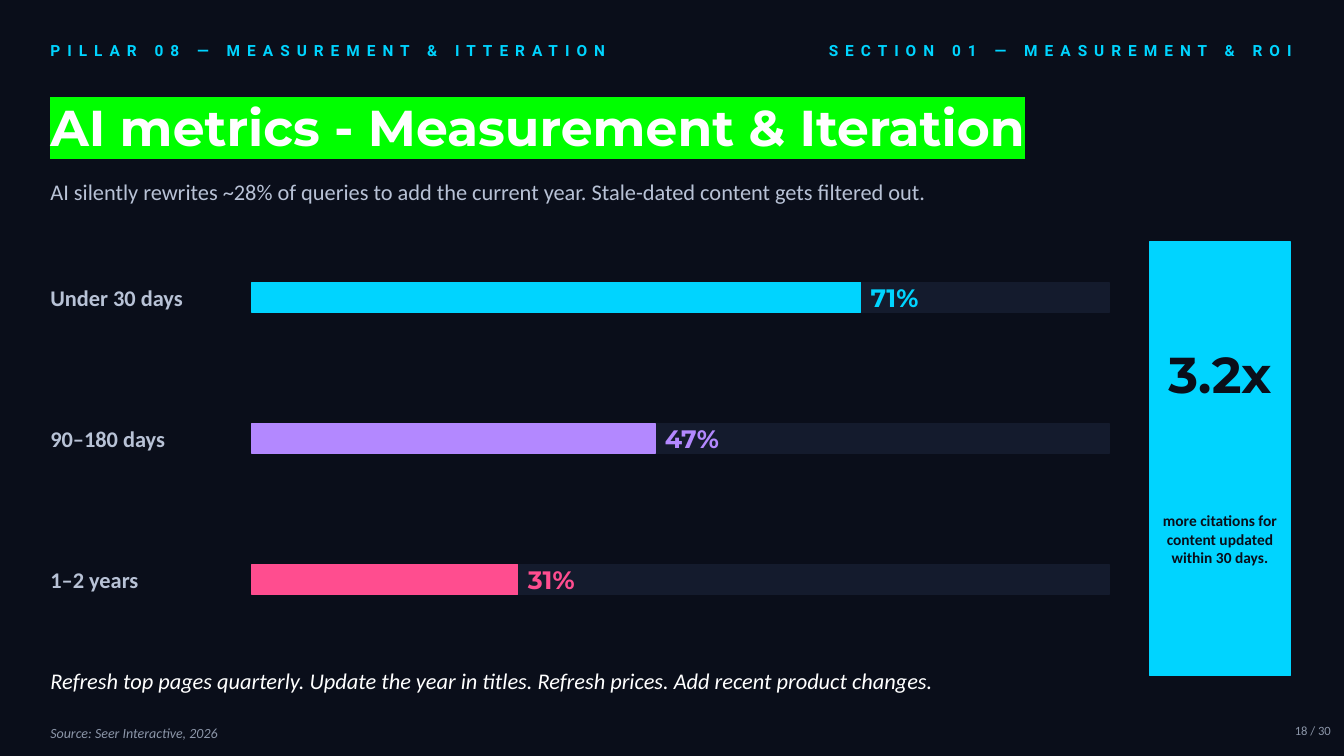
from dataclasses import dataclass, field

from lxml.etree import SubElement
from pptx import Presentation
from pptx.dml.color import RGBColor
from pptx.enum.shapes import MSO_SHAPE
from pptx.enum.text import MSO_ANCHOR, PP_ALIGN
from pptx.oxml.ns import qn
from pptx.slide import Slide
from pptx.util import Inches, Pt

COLORS = {
    "navy": "0A0E1A",
    "track": "141B2D",
    "cyan": "00D4FF",
    "violet": "B388FF",
    "pink": "FF4D8F",
    "green": "00FF00",
    "white": "FFFFFF",
    "mist": "B8C2D6",
    "gray": "8B95A8",
}
FORMATS = {
    "title": {"name": "Montserrat", "size": Pt(36), "bold": True},
    "value": {"name": "Montserrat", "size": Pt(18), "bold": True},
    "body": {"name": "Calibri", "size": Pt(16)},
    "label": {"name": "Calibri", "size": Pt(16), "bold": True},
    "action": {"name": "Calibri", "size": Pt(16), "italic": True},
    "caption": {"name": "Calibri", "size": Pt(11), "bold": True},
    "source": {"name": "Calibri", "size": Pt(10), "italic": True},
    "page": {"name": "Calibri", "size": Pt(9)},
    "header": {"name": "Roboto", "size": Pt(11), "bold": True},
}
FRAME = {
    "margin_left": 0,
    "margin_right": 0,
    "margin_top": 0,
    "margin_bottom": 0,
    "word_wrap": True,
    "vertical_anchor": MSO_ANCHOR.MIDDLE,
}
Box = tuple[float, float, float, float]

MARGIN = 0.5
BAR_LEFT, BAR_WIDTH, BAR_HEIGHT = 2.5, 8.5, 0.3
ROW_TOP, ROW_STEP, ROW_HEIGHT = 2.6, 1.4, 0.7
CARD_LEFT, CARD_WIDTH = 11.4, 1.4


@dataclass
class Label:
    text: str
    box: Box
    style: str
    color: str
    align: PP_ALIGN = PP_ALIGN.LEFT
    highlight: str = ""
    attrs: dict[str, str] = field(default_factory=dict)


@dataclass
class Bar:
    age: str
    percent: int
    color: str


SPACED = {"spc": "500"}
LABELS = [
    Label("PILLAR 08 — MEASUREMENT & ITTERATION", (MARGIN, 0.35, 6, 0.3),
          "header", "cyan", attrs=SPACED),
    Label("SECTION 01 — MEASUREMENT & ROI", (8.22, 0.35, 5.1, 0.3),
          "header", "cyan", attrs=SPACED),
    Label("AI metrics - Measurement & Iteration", (MARGIN, 0.8, 12, 0.9),
          "title", "white", highlight="green"),
    Label("AI silently rewrites ~28% of queries to add the current year. "
          "Stale-dated content gets filtered out.",
          (MARGIN, 1.7, 12, 0.4), "body", "mist"),
    Label("3.2x", (CARD_LEFT, 3.2, CARD_WIDTH, 1), "title", "navy", PP_ALIGN.CENTER),
    Label("more citations for content updated within 30 days.",
          (CARD_LEFT, 4.2, CARD_WIDTH, 2.3), "caption", "navy", PP_ALIGN.CENTER),
    Label("Refresh top pages quarterly. Update the year in titles. "
          "Refresh prices. Add recent product changes.",
          (MARGIN, 6.6, 12, 0.3), "action", "white"),
    Label("Source: Seer Interactive, 2026", (MARGIN, 7.15, 12, 0.25), "source", "gray"),
    Label("18 / 30", (12.4, 7.1, 0.8, 0.3), "page", "gray", PP_ALIGN.RIGHT),
]
BARS = [
    Bar("Under 30 days", 71, "cyan"),
    Bar("90–180 days", 47, "violet"),
    Bar("1–2 years", 31, "pink"),
]


def rgb(color: str) -> RGBColor:
    return RGBColor.from_string(COLORS[color])


def add_label(s: Slide, label: Label) -> None:
    tf = s.shapes.add_textbox(*map(Inches, label.box)).text_frame
    for name, value in FRAME.items():
        setattr(tf, name, value)
    p = tf.paragraphs[0]
    p.alignment = label.align
    r = p.add_run()
    r.text = label.text
    r.font.color.rgb = rgb(label.color)
    rpr = r._r.get_or_add_rPr()
    if label.highlight:
        mark = SubElement(rpr, qn("a:highlight"))
        SubElement(mark, qn("a:srgbClr")).set("val", COLORS[label.highlight])
    for name, value in FORMATS[label.style].items():
        setattr(r.font, name, value)
    for name, value in label.attrs.items():
        rpr.set(name, value)


def add_rect(s: Slide, box: Box, color: str) -> None:
    sp = s.shapes.add_shape(MSO_SHAPE.RECTANGLE, *map(Inches, box))
    sp.shadow.inherit = False
    sp.fill.solid()
    sp.fill.fore_color.rgb = rgb(color)
    sp.line.color.rgb = rgb(color)
    sp.line.width = Pt(1)


def add_bar(s: Slide, bar: Bar, top: float) -> None:
    width = BAR_WIDTH * bar.percent / 100
    bar_top = top + (ROW_HEIGHT - BAR_HEIGHT) / 2
    add_label(s, Label(bar.age, (MARGIN, top, 2, ROW_HEIGHT), "label", "mist"))
    add_rect(s, (BAR_LEFT, bar_top, BAR_WIDTH, BAR_HEIGHT), "track")
    add_rect(s, (BAR_LEFT, bar_top, width, BAR_HEIGHT), bar.color)
    value_box = (BAR_LEFT + width + 0.1, top, 0.9, ROW_HEIGHT)
    add_label(s, Label(f"{bar.percent}%", value_box, "value", bar.color))


def main() -> None:
    prs = Presentation()
    prs.slide_width, prs.slide_height = Inches(13.33), Inches(7.5)
    s = prs.slides.add_slide(prs.slide_layouts[6])
    s.background.fill.solid()
    s.background.fill.fore_color.rgb = rgb("navy")
    for i, bar in enumerate(BARS):
        add_bar(s, bar, ROW_TOP + i * ROW_STEP)
    add_rect(s, (CARD_LEFT, 2.4, CARD_WIDTH, 4.3), "cyan")
    for label in LABELS:
        add_label(s, label)
    prs.save("out.pptx")


if __name__ == "__main__":
    main()
